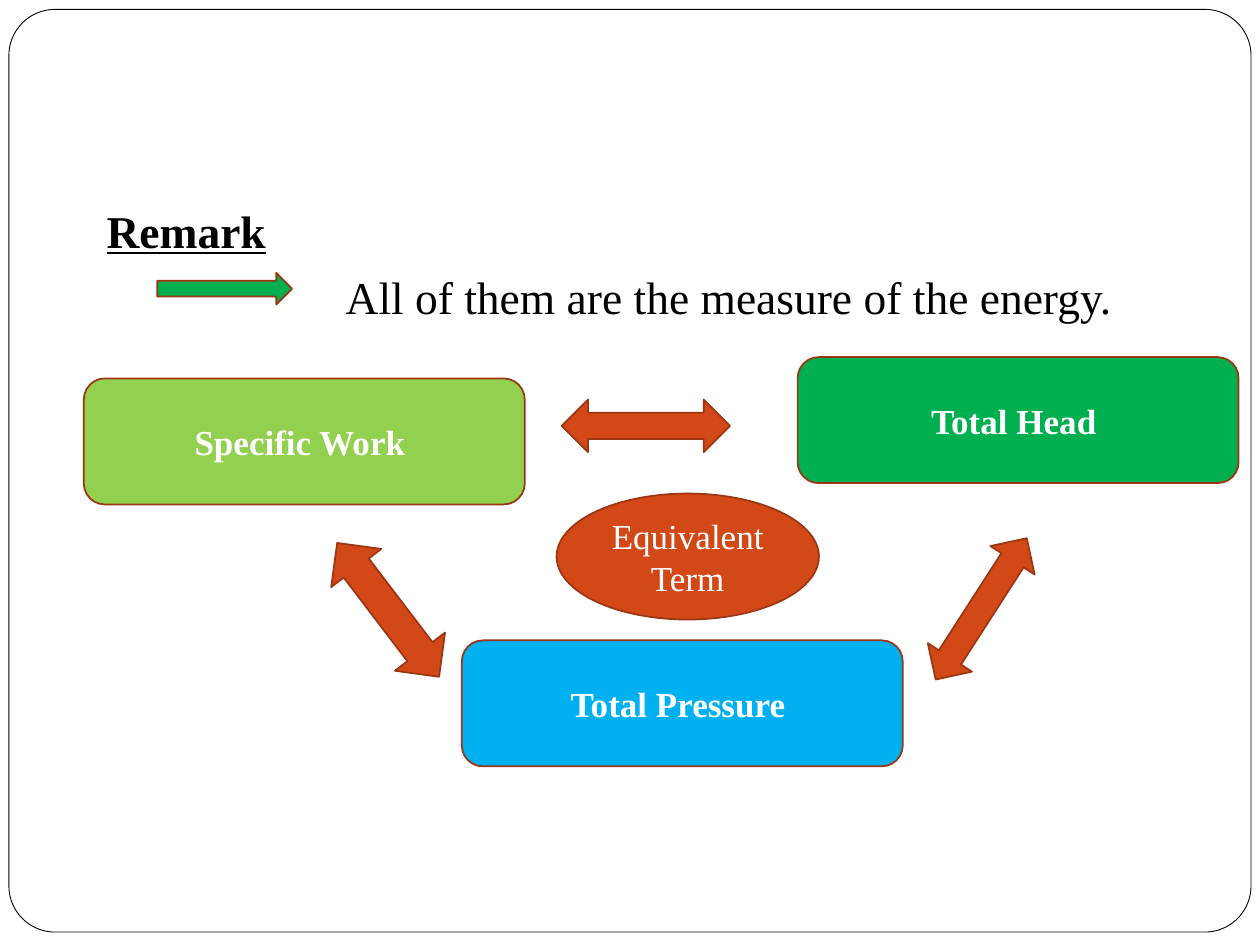
from dataclasses import dataclass

from pptx import Presentation
from pptx.dml.color import RGBColor
from pptx.enum.shapes import MSO_SHAPE
from pptx.enum.text import MSO_ANCHOR, PP_ALIGN
from pptx.util import Cm, Pt


@dataclass(frozen=True)
class Theme:
    font: str = "Times New Roman"
    white: str = "FFFFFF"
    black: str = "000000"
    lime: str = "92D050"
    green: str = "00B050"
    blue: str = "00B0F0"
    rust: str = "D34817"
    edge: str = "9C3511"
    body: int = 26
    label: int = 20


THEME = Theme()


def style(item, form):
    for name, value in form.items():
        setattr(item, name, value)


def write(para, text, size, color, **form):
    run = para.add_run()
    run.text = text
    style(run.font, {"name": THEME.font, "size": Pt(size), **form})
    run.font.color.rgb = RGBColor.from_string(color)


def draw(slide, kind, box, fill, line=THEME.edge, width=1, turn=0):
    shape = slide.shapes.add_shape(kind, *map(Cm, box))
    shape.shadow.inherit = False
    shape.fill.solid()
    shape.fill.fore_color.rgb = RGBColor.from_string(fill)
    shape.line.color.rgb = RGBColor.from_string(line)
    shape.line.width = Pt(width)
    shape.rotation = turn
    return shape


def label(shape, text, bold):
    frame = shape.text_frame
    style(frame, {"word_wrap": True, "vertical_anchor": MSO_ANCHOR.MIDDLE})
    para = frame.paragraphs[0]
    para.alignment = PP_ALIGN.CENTER
    write(para, text, THEME.label, THEME.white, bold=bold)


def border(slide, box):
    shape = draw(slide, MSO_SHAPE.ROUNDED_RECTANGLE, box, THEME.white, THEME.black, 0.5)
    shape.adjustments[0] = 0.05


def remark(slide, box):
    left, top, width, height = box
    frame = slide.shapes.add_textbox(*map(Cm, box)).text_frame
    frame.word_wrap = True
    write(frame.paragraphs[0], "Remark", THEME.body, THEME.black, bold=True, underline=True)

    # Statement, indented past the pointer
    para = frame.add_paragraph()
    para.space_before = Pt(7)
    para._p.get_or_add_pPr().set("marL", str(Cm(4.82)))
    write(para, "All of them are the measure of the energy.", THEME.body, THEME.black)
    draw(slide, MSO_SHAPE.RIGHT_ARROW, (left + 1.27, top + 1.54, 2.72, 0.64), THEME.green)


def cycle(slide, box):
    left, top, width, height = box
    wide, high = 8.89, 2.54

    # Three equivalent quantities
    nodes = (
        ("Specific Work ", 0, 0.43, THEME.lime),
        ("Total Head ", width - wide, 0, THEME.green),
        ("Total Pressure ", 7.62, height - high, THEME.blue),
    )
    for text, x, y, fill in nodes:
        node = draw(slide, MSO_SHAPE.ROUNDED_RECTANGLE, (left + x, top + y, wide, high), fill)
        label(node, text, True)

    # Hub
    hub = draw(slide, MSO_SHAPE.OVAL, (left + 9.53, top + 2.75, 5.29, high), THEME.rust)
    label(hub, "Equivalent Term", False)

    # Two-way arrows between the quantities
    for x, y, thick, turn in (
        (5.5, 3.4, 1.27, 322.7),
        (10.8, -0.31, 1.06, 90),
        (17.56, 3.38, 1.06, 32.8),
    ):
        draw(slide, MSO_SHAPE.UP_DOWN_ARROW, (left + x, top + y, thick, 3.39), THEME.rust, turn=turn)


def main():
    deck = Presentation()
    style(deck, {"slide_width": Cm(25.4), "slide_height": Cm(19.05)})
    slide = deck.slides.add_slide(deck.slide_layouts[6])
    border(slide, (0.18, 0.19, 25.04, 18.6))
    remark(slide, (1.9, 3.96, 22.23, 2.6))
    cycle(slide, (1.69, 7.2, 23.28, 8.25))
    deck.save("out.pptx")


if __name__ == "__main__":
    main()
